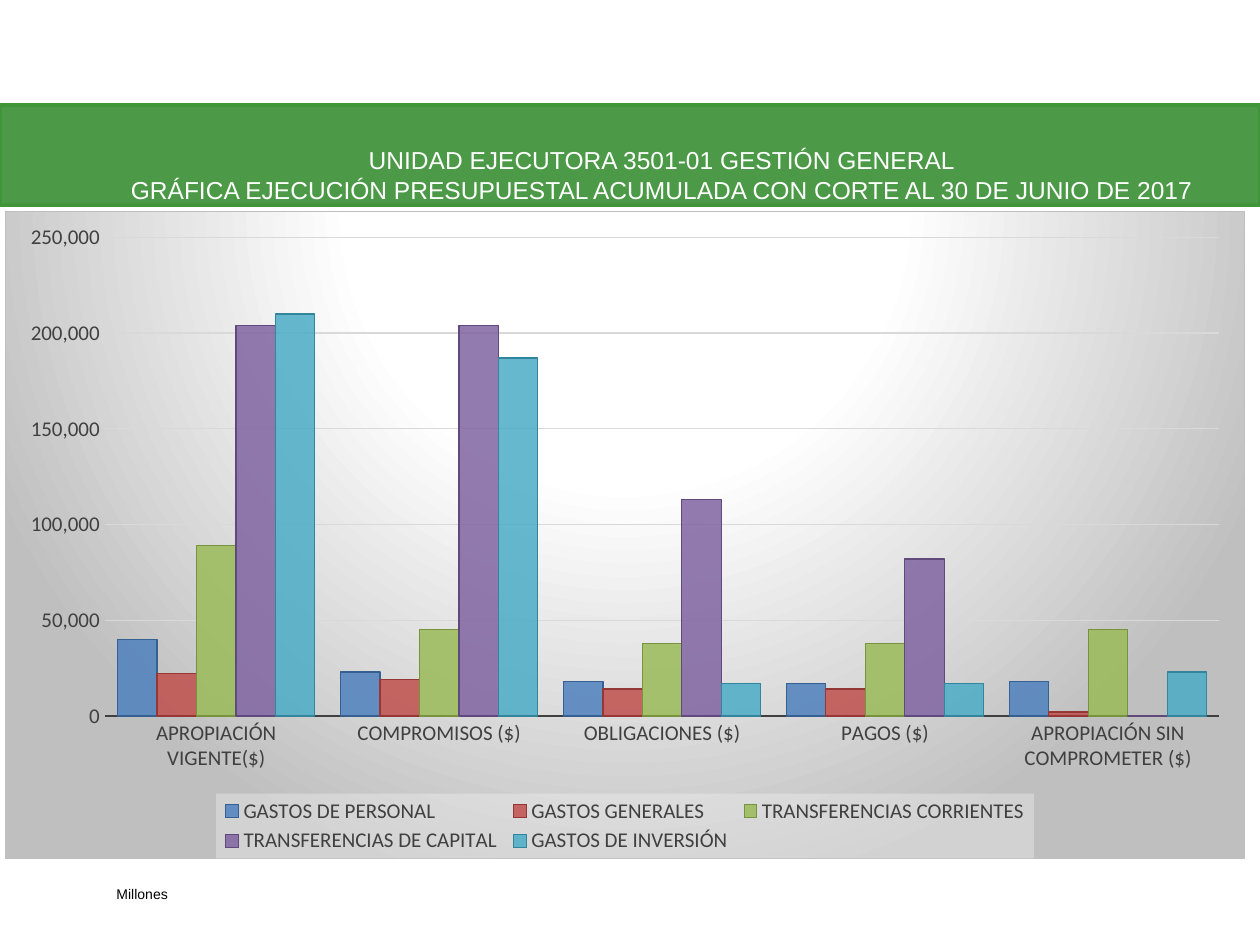
from lxml.etree import fromstring
from pptx import Presentation
from pptx.chart.data import CategoryChartData
from pptx.dml.color import RGBColor
from pptx.enum.chart import XL_CHART_TYPE as ChartType, XL_LEGEND_POSITION as LegendPosition
from pptx.enum.chart import XL_TICK_MARK as TickMark
from pptx.enum.shapes import MSO_SHAPE as Shape
from pptx.enum.text import MSO_ANCHOR as Anchor, MSO_AUTO_SIZE as AutoSize, PP_ALIGN as Align
from pptx.oxml.ns import nsdecls, qn
from pptx.util import Emu, Pt

COLORS = {
    "banner": "4C9A47", "banner_edge": "409539", "white": "FFFFFF", "black": "000000",
    "label": "404040", "grid": "D9D9D9", "frame": "BFBFBF", "legend": "F2F2F2",
}
TITLE = [
    "UNIDAD EJECUTORA 3501-01 GESTIÓN GENERAL",
    "GRÁFICA EJECUCIÓN PRESUPUESTAL ACUMULADA CON CORTE AL 30 DE JUNIO DE 2017",
]
STAGES = ["APROPIACIÓN VIGENTE($)", "COMPROMISOS ($)", "OBLIGACIONES ($)", "PAGOS ($)",
          "APROPIACIÓN SIN COMPROMETER ($)"]
EXPENSES = [
    ("GASTOS DE PERSONAL", [40000, 23000, 18000, 17000, 18000], "4F81BD", "376092"),
    ("GASTOS GENERALES", [22000, 19000, 14000, 14000, 2000], "C0504D", "953735"),
    ("TRANSFERENCIAS CORRIENTES", [89000, 45000, 38000, 38000, 45000], "9BBB59", "77933C"),
    ("TRANSFERENCIAS DE CAPITAL", [204000, 204000, 113000, 82000, 0], "8064A2", "604A7B"),
    ("GASTOS DE INVERSIÓN", [210000, 187000, 17000, 17000, 23000], "4BACC6", "31859C"),
]


def apply(target, **values):
    for name, value in values.items():
        setattr(target, name, value)


def px(*lengths):
    return [Emu(round(length * 914400 / 126)) for length in lengths]


class SlideBuilder:
    def __init__(self, slide):
        self.slide = slide

    def color(self, name):
        return RGBColor.from_string(COLORS.get(name, name))

    def font(self, font, size, name, color):
        apply(font, size=Pt(size), name=name)
        font.color.rgb = self.color(color)

    def line(self, line, color, width):
        line.color.rgb = self.color(color)
        line.width = Pt(width)

    def banner(self, *box):
        band = self.slide.shapes.add_shape(Shape.RECTANGLE, *px(*box))
        band.shadow.inherit = False
        band.fill.solid()
        band.fill.fore_color.rgb = self.color("banner")
        self.line(band.line, "banner_edge", 2)
        tree = band.element.getparent()
        tree.insert(2, band.element)

    def set_text(self, holder, lines, size, color, align):
        frame = holder.text_frame
        apply(frame, text="\n".join(lines), word_wrap=True,
              vertical_anchor=Anchor.TOP, auto_size=AutoSize.SHAPE_TO_FIT_TEXT)
        for paragraph in frame.paragraphs:
            paragraph.alignment = align
            self.font(paragraph.runs[0].font, size, "Arial", color)

    def title(self, lines, *box):
        heading = self.slide.shapes.title
        apply(heading, **dict(zip(("left", "top", "width", "height"), px(*box))))
        self.set_text(heading, lines, 14, "white", Align.CENTER)

    def note(self, text, *box):
        self.set_text(self.slide.shapes.add_textbox(*px(*box)), [text], 8, "black", Align.LEFT)

    def place(self, parent, index, x, y, w, h, inner=""):
        for old in parent.findall(qn("c:layout")):
            parent.remove(old)
        parent.insert(index, fromstring(
            f'<c:layout {nsdecls("c")}><c:manualLayout>{inner}'
            '<c:xMode val="edge"/><c:yMode val="edge"/>'
            f'<c:x val="{x}"/><c:y val="{y}"/><c:w val="{w}"/><c:h val="{h}"/>'
            '</c:manualLayout></c:layout>'))

    def chart(self, *box):
        data = CategoryChartData(number_format="#,##0")
        data.categories = STAGES
        for name, values, *_ in EXPENSES:
            data.add_series(name, values)
        chart = self.slide.shapes.add_chart(ChartType.COLUMN_CLUSTERED, *px(*box), data).chart
        chart.has_title = False
        self.font(chart.font, 10, "Calibri", "black")
        plot = chart.plots[0]
        apply(plot, gap_width=65, overlap=0, vary_by_categories=False)
        for series, (*_, fill, edge) in zip(plot.series, EXPENSES):
            series.format.fill.solid()
            series.format.fill.fore_color.rgb = self.color(fill)
            shade = next(series.format.fill._xPr.iter(qn("a:srgbClr")))
            shade.append(fromstring(f'<a:alpha {nsdecls("a")} val="85000"/>'))
            self.line(series.format.line, edge, 0.75)
        self.axes(chart)
        self.legend(chart)
        self.place(chart._chartSpace.chart.plotArea, 0, 0.08, 0.04, 0.9, 0.74,
                   '<c:layoutTarget val="inner"/>')
        self.backdrop(chart)

    def axes(self, chart):
        for axis in (chart.category_axis, chart.value_axis):
            apply(axis, major_tick_mark=TickMark.NONE, minor_tick_mark=TickMark.NONE)
            self.font(axis.tick_labels.font, 12, "Calibri", "label")
        self.line(chart.category_axis.format.line, "label", 1.5)
        amounts = chart.value_axis
        apply(amounts, minimum_scale=0, maximum_scale=250000, major_unit=50000,
              has_major_gridlines=True)
        apply(amounts.tick_labels, number_format="#,##0", number_format_is_linked=False)
        amounts.format.line.fill.background()
        self.line(amounts.major_gridlines.format.line, "grid", 0.75)

    def legend(self, chart):
        chart.has_legend = True
        apply(chart.legend, position=LegendPosition.BOTTOM, include_in_layout=False)
        self.font(chart.legend.font, 12, "Calibri", "label")
        element = chart.legend._element
        self.place(element, 1, 0.17, 0.9, 0.66, 0.1)
        element.find(qn("c:overlay")).addnext(fromstring(
            f'<c:spPr {nsdecls("c", "a")}><a:solidFill><a:srgbClr val="{COLORS["legend"]}">'
            '<a:alpha val="39000"/></a:srgbClr></a:solidFill></c:spPr>'))

    def backdrop(self, chart):
        stops = "".join(
            f'<a:gs pos="{share * 1000}"><a:srgbClr val="{COLORS[name]}"/></a:gs>'
            for share, name in ((0, "white"), (39, "white"), (100, "frame")))
        chart._chartSpace.chart.addnext(fromstring(
            f'<c:spPr {nsdecls("c", "a")}><a:gradFill><a:gsLst>{stops}</a:gsLst>'
            '<a:path path="circle"><a:fillToRect l="50000" t="-80000" r="50000" b="180000"/>'
            f'</a:path></a:gradFill><a:ln w="{Pt(0.75)}"><a:solidFill>'
            f'<a:srgbClr val="{COLORS["frame"]}"/></a:solidFill></a:ln></c:spPr>'))


def main():
    deck = Presentation()
    apply(deck, **dict(zip(("slide_width", "slide_height"), px(1260, 945))))
    builder = SlideBuilder(deck.slides.add_slide(deck.slide_layouts[5]))
    builder.banner(0, 105, 1260, 100)
    builder.title(TITLE, 64, 139, 1196, 72)
    builder.note("Millones", 104, 879, 80, 30)
    builder.chart(5, 211, 1240, 648)
    deck.save("out.pptx")


if __name__ == "__main__":
    main()
